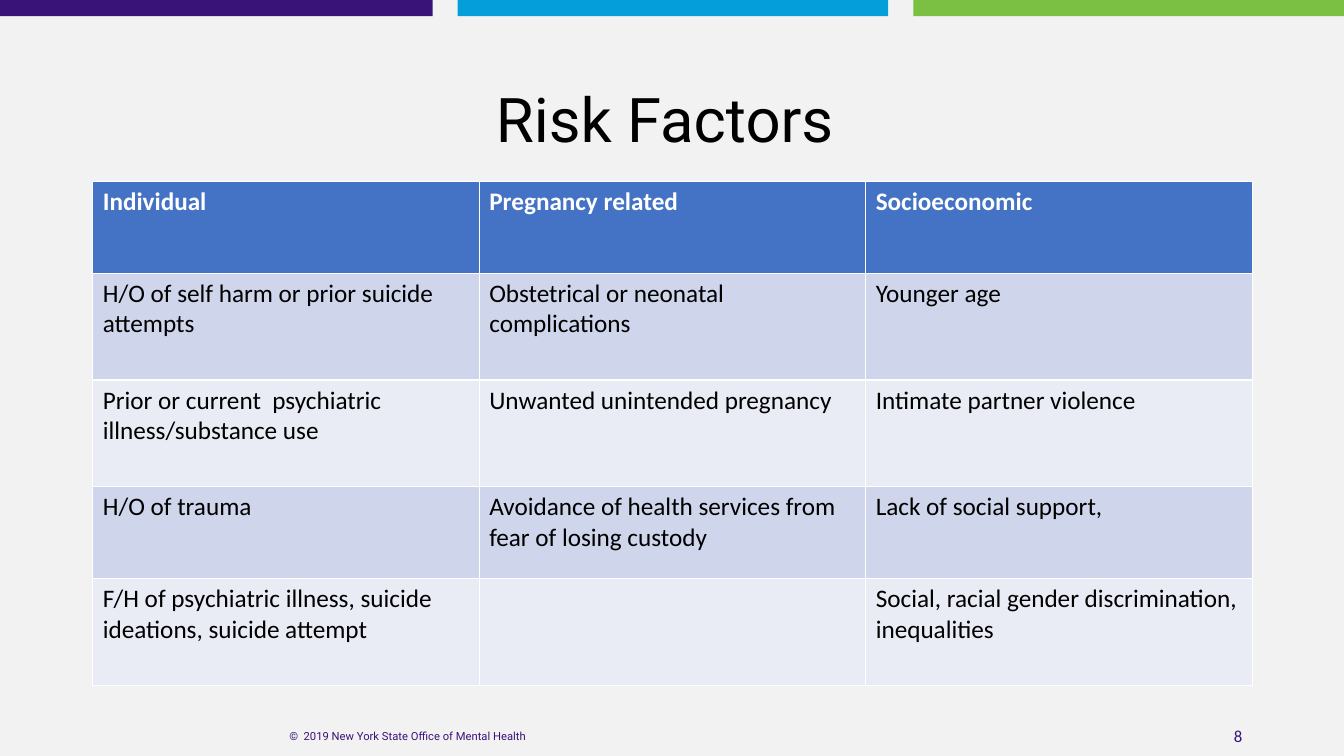
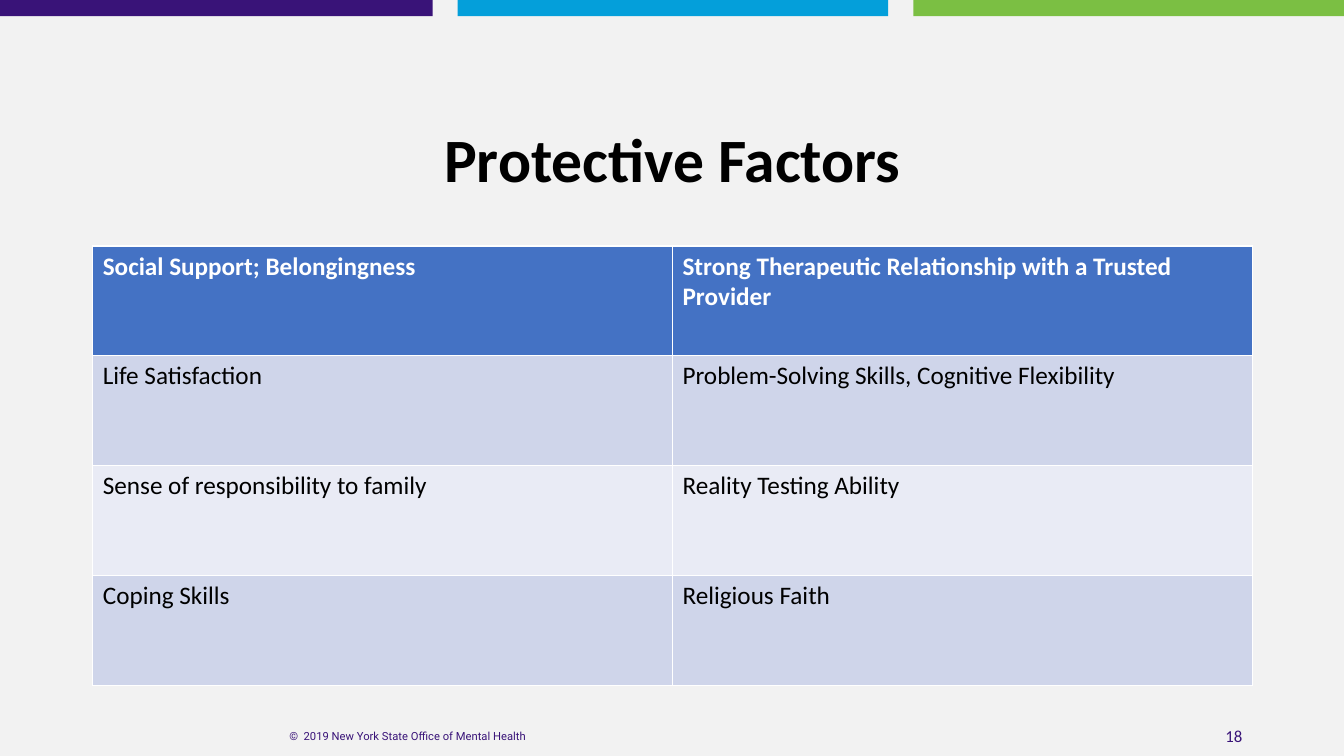
import pptx
import pptx.dml.color
import pptx.enum.shapes
import pptx.enum.text
import pptx.util

Inches, Pt = pptx.util.Inches, pptx.util.Pt
ALIGN = pptx.enum.text.PP_ALIGN
MIDDLE = pptx.enum.text.MSO_ANCHOR.MIDDLE

PURPLE, BLUE, GREEN = "391378", "049FDA", "7BBF43"
BACKGROUND, BLACK, WHITE = "F2F2F2", "000000", "FFFFFF"
HEADER_FILL, ROW_FILLS = "4472C4", ("CFD5EA", "E9EBF5")
LEFT, WIDTH = 0.92, 11.5
BAND_HEIGHT = 0.16
BANDS = [(0, 4.29, PURPLE), (4.54, 4.27, BLUE), (9.06, 4.27, GREEN)]
COPYRIGHT = "©  2019 New York State Office of Mental Health"

SLIDES = [
    {
        "number": "8",
        "title": "Risk Factors ",
        "title_font": ("Roboto", False),
        "title_box": (0.78, 0.87),
        "table_top": 1.8,
        "row_heights": [0.91, 1.06, 1.06, 0.91, 1.06],
        "rows": [
            ("Individual", "Pregnancy related", "Socioeconomic"),
            ("H/O of self harm or prior suicide attempts",
             "Obstetrical or neonatal complications",
             "Younger age"),
            ("Prior or current  psychiatric illness/substance use",
             "Unwanted unintended pregnancy",
             "Intimate partner violence"),
            ("H/O of trauma",
             "Avoidance of health services from fear of losing custody",
             "Lack of social support,"),
            ("F/H of psychiatric illness, suicide ideations, suicide attempt",
             "",
             "Social, racial gender discrimination, inequalities"),
        ],
    },
    {
        "number": "18",
        "title": "Protective Factors",
        "title_font": ("Calibri", True),
        "title_box": (1.22, 0.78),
        "table_top": 2.44,
        "row_heights": [1.09] * 4,
        "rows": [
            ("Social Support; Belongingness",
             "Strong Therapeutic Relationship with a Trusted Provider"),
            ("Life Satisfaction",
             "Problem-Solving Skills, Cognitive Flexibility"),
            ("Sense of responsibility to family", "Reality Testing Ability"),
            ("Coping Skills", "Religious Faith"),
        ],
    },
]


def rgb(value):
    return pptx.dml.color.RGBColor.from_string(value)


def paint(fill, color):
    fill.solid()
    fill.fore_color.rgb = rgb(color)


def write(tf, text, font, size, color, bold=False, align=ALIGN.LEFT):
    tf.word_wrap = True
    p = tf.paragraphs[0]
    p.text = text
    p.alignment = align
    p.font.name = font
    p.font.size = Pt(size)
    p.font.bold = bold
    p.font.color.rgb = rgb(color)
    return p


def add_footer(s, left, width, text, font, size, align):
    box = s.shapes.add_textbox(Inches(left), Inches(7.1), Inches(width), Inches(0.4))
    box.text_frame.vertical_anchor = MIDDLE
    write(box.text_frame, text, font, size, PURPLE, align=align)


def add_frame(s, number):
    """Add the background, colour bands and footers that all slides share."""
    paint(s.background.fill, BACKGROUND)
    for left, width, color in BANDS:
        band = s.shapes.add_shape(pptx.enum.shapes.MSO_SHAPE.RECTANGLE,
                                  Inches(left), 0, Inches(width), Inches(BAND_HEIGHT))
        band.shadow.inherit = False
        band.line.fill.background()
        paint(band.fill, color)
    add_footer(s, 9.42, 3, number, "Calibri", 12, ALIGN.RIGHT)
    add_footer(s, 1.81, 4.47, COPYRIGHT, "Roboto", 8, ALIGN.CENTER)


def set_title(s, text, title_font, title_box):
    title = s.shapes.title
    top, height = title_box
    title.left, title.top = Inches(LEFT), Inches(top)
    title.width, title.height = Inches(WIDTH), Inches(height)
    title.text_frame.vertical_anchor = MIDDLE
    font, bold = title_font
    p = write(title.text_frame, text, font, 44, BLACK, bold, ALIGN.CENTER)
    p.line_spacing = 0.9


def add_factor_table(s, top, row_heights, rows):
    columns = len(rows[0])
    table = s.shapes.add_table(len(rows), columns, Inches(LEFT), Inches(top),
                               Inches(WIDTH), Inches(sum(row_heights))).table
    for column in table.columns:
        column.width = Inches(WIDTH / columns)
    for i, (height, texts) in enumerate(zip(row_heights, rows)):
        table.rows[i].height = Inches(height)
        header = i == 0
        for j, text in enumerate(texts):
            cell = table.cell(i, j)
            paint(cell.fill, HEADER_FILL if header else ROW_FILLS[(i - 1) % 2])
            write(cell.text_frame, text, "Calibri", 18,
                  WHITE if header else BLACK, bold=header)


def main():
    prs = pptx.Presentation()
    prs.slide_width, prs.slide_height = Inches(13.33), Inches(7.5)
    title_only = prs.slide_layouts[5]
    for content in SLIDES:
        s = prs.slides.add_slide(title_only)
        add_frame(s, content["number"])
        set_title(s, content["title"], content["title_font"], content["title_box"])
        add_factor_table(s, content["table_top"], content["row_heights"], content["rows"])
    prs.save("out.pptx")


if __name__ == "__main__":
    main()
